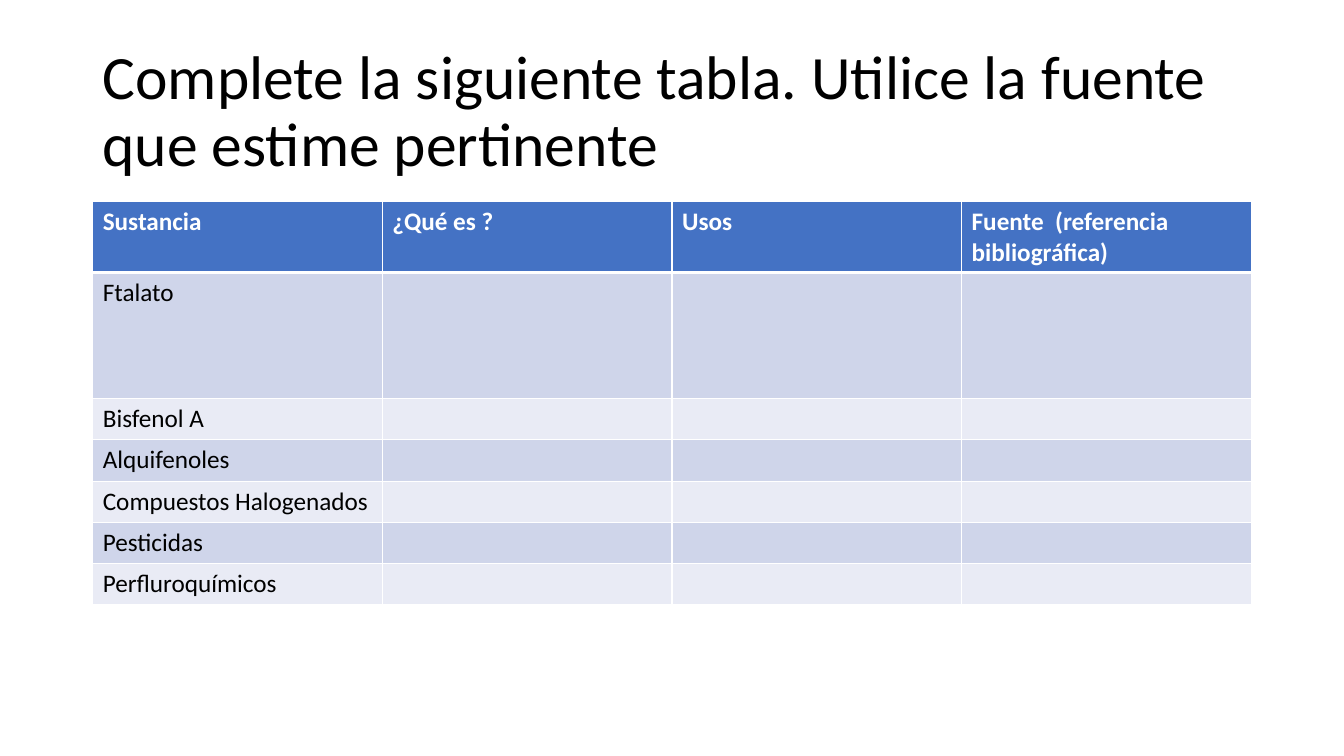
from dataclasses import dataclass

from lxml import etree
from pptx import Presentation
from pptx.dml.color import RGBColor
from pptx.enum.text import MSO_ANCHOR, PP_ALIGN
from pptx.oxml.ns import qn
from pptx.table import _Cell
from pptx.text.text import TextFrame
from pptx.util import Inches, Pt

LEFT, JUSTIFY = PP_ALIGN.LEFT, PP_ALIGN.JUSTIFY
MIDDLE = MSO_ANCHOR.MIDDLE

FONT = "Calibri"
BLACK, WHITE, HEADER_BLUE = "000000", "FFFFFF", "4472C4"
BANDS = ("CFD5EA", "E9EBF5")

SLIDE_W, SLIDE_H = Inches(13.333), Inches(7.5)
MARGIN = round(SLIDE_W * 0.069)
CONTENT_W = SLIDE_W - 2 * MARGIN
ROW_H = Inches(0.41)
THIN, THICK = 1, 3

HEADERS = ("Sustancia", "¿Qué es ?", "Usos", "Fuente  (referencia bibliográfica)")


@dataclass(frozen=True)
class Substance:
    name: str
    rows: float = 1
    align: PP_ALIGN = LEFT


SUBSTANCES = (
    Substance("Ftalato", rows=3.05),
    Substance("Bisfenol A"),
    Substance("Alquifenoles"),
    Substance("Compuestos Halogenados", align=JUSTIFY),
    Substance("Pesticidas"),
    Substance("Perfluroquímicos"),
)


def rgb(value: str) -> RGBColor:
    return RGBColor.from_string(value)


def write(frame: TextFrame, text: str, *, size: float = 18, color: str = BLACK,
          bold: bool = False, align: PP_ALIGN = LEFT, spacing: float = 1.0) -> None:
    frame.word_wrap = True
    paragraph = frame.paragraphs[0]
    paragraph.alignment = align
    paragraph.line_spacing = spacing
    run = paragraph.add_run()
    run.text = text
    run.font.name = FONT
    run.font.size = Pt(size)
    run.font.bold = bold
    run.font.color.rgb = rgb(color)


def style_cell(cell: _Cell, fill: str, top: float = THIN, bottom: float = THIN) -> None:
    """Draw white borders, given in points, and fill the cell."""
    properties = cell._tc.get_or_add_tcPr()
    for side, width in (("L", THIN), ("R", THIN), ("T", top), ("B", bottom)):
        line = etree.SubElement(properties, qn(f"a:ln{side}"), w=str(Pt(width)))
        solid = etree.SubElement(line, qn("a:solidFill"))
        etree.SubElement(solid, qn("a:srgbClr"), val=WHITE)
    cell.fill.solid()
    cell.fill.fore_color.rgb = rgb(fill)


def add_title(slide) -> None:
    title = slide.shapes.add_textbox(
        MARGIN, round(SLIDE_H * 0.053), CONTENT_W, round(SLIDE_H * 0.193))
    title.text_frame.vertical_anchor = MIDDLE
    write(title.text_frame,
          "Complete la siguiente tabla. Utilice la fuente que estime pertinente",
          size=44, spacing=0.9)


def add_substance_table(slide) -> None:
    height = round(SLIDE_H * 0.531)
    frame = slide.shapes.add_table(
        len(SUBSTANCES) + 1, len(HEADERS), MARGIN, round(SLIDE_H * 0.267),
        CONTENT_W, height)
    table = frame.table
    table.first_row = table.horz_banding = False

    table.rows[0].height = ROW_H
    for cell, header in zip(table.rows[0].cells, HEADERS):
        style_cell(cell, HEADER_BLUE, bottom=THICK)
        write(cell.text_frame, header, color=WHITE, bold=True)

    for index, substance in enumerate(SUBSTANCES):
        row = table.rows[index + 1]
        row.height = round(ROW_H * substance.rows)
        for cell in row.cells:
            style_cell(cell, BANDS[index % 2], top=THIN if index else THICK)
        write(row.cells[0].text_frame, substance.name, align=substance.align)
    frame.height = height


def main() -> None:
    presentation = Presentation()
    presentation.slide_width, presentation.slide_height = SLIDE_W, SLIDE_H
    slide = presentation.slides.add_slide(presentation.slide_layouts[6])
    slide.background.fill.solid()
    slide.background.fill.fore_color.rgb = rgb(WHITE)
    add_title(slide)
    add_substance_table(slide)
    presentation.save("out.pptx")


if __name__ == "__main__":
    main()
